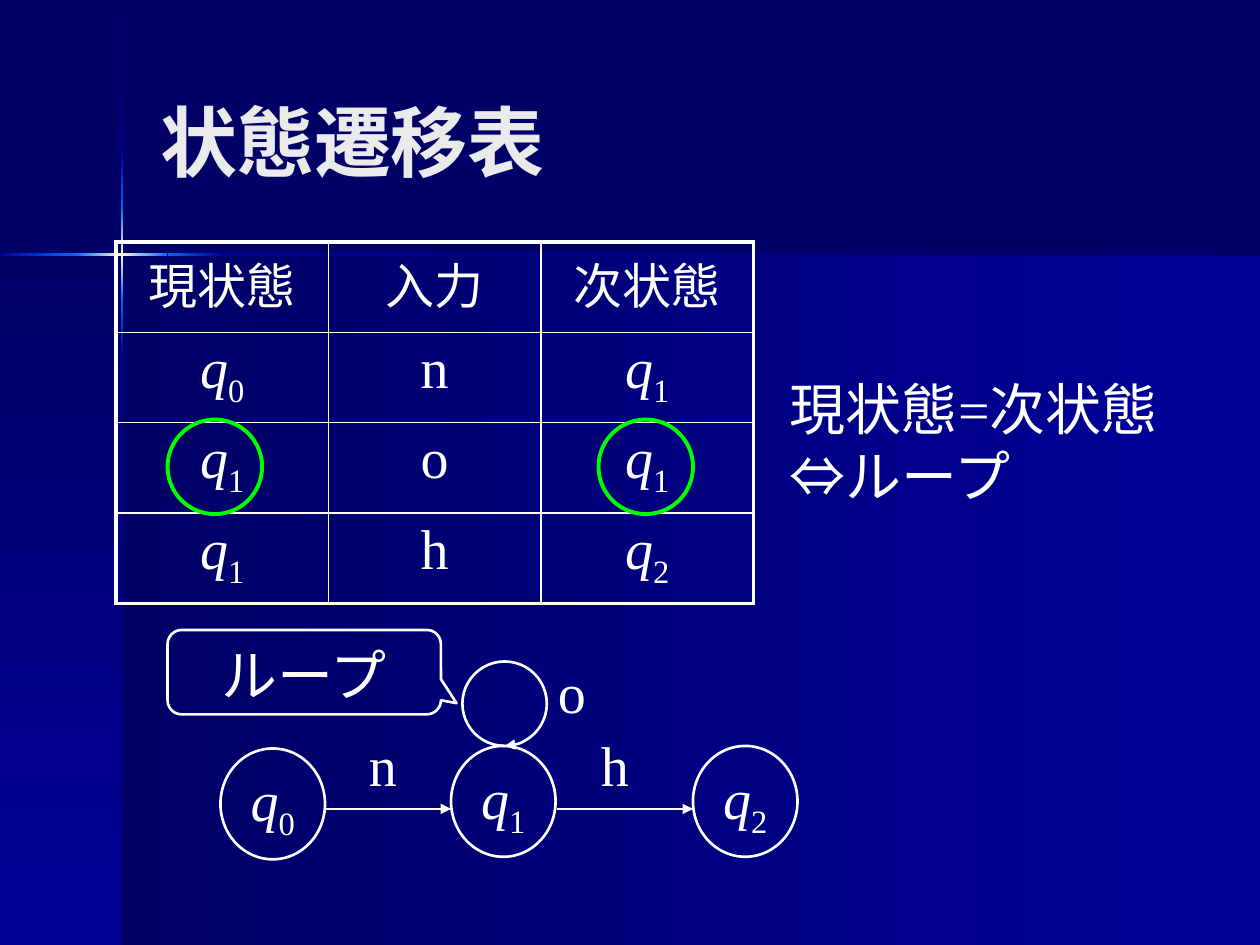
from lxml.etree import SubElement
from pptx import Presentation
from pptx.dml.color import RGBColor
from pptx.enum.shapes import MSO_CONNECTOR, MSO_SHAPE
from pptx.enum.text import MSO_ANCHOR, PP_ALIGN
from pptx.oxml.ns import qn
from pptx.util import Inches, Pt

FONT = "Times New Roman"
WHITE, GREEN = "FFFFFF", "00FF00"
NAVY, BLUE, GLOW, CREAM = "000066", "000099", "0066FF", "FFFFCC"


def color(code):
    return RGBColor.from_string(code)


def box(*sides):
    return [Inches(side) for side in sides]


def add_stops(fill, stops, angle):
    """Give a linear gradient of evenly spaced colours, angle clockwise."""
    fill.gradient()
    grad = fill._xPr.find(qn("a:gradFill"))
    for child in list(grad):
        grad.remove(child)
    holder = SubElement(grad, qn("a:gsLst"))
    for i, code in enumerate(stops):
        place = str(100000 * i // (len(stops) - 1))
        stop = SubElement(holder, qn("a:gs"), pos=place)
        SubElement(stop, qn("a:srgbClr"), val=code)
    SubElement(grad, qn("a:lin"), ang=str(angle * 60000), scaled="0")


def add_band(slide, at, stops, angle):
    band = slide.shapes.add_shape(MSO_SHAPE.RECTANGLE, *box(*at))
    band.shadow.inherit = False
    band.line.fill.background()
    add_stops(band.fill, stops, angle)


def add_backdrop(slide):
    slide.background.fill.solid()
    slide.background.fill.fore_color.rgb = color(NAVY)
    add_band(slide, (0.97, 2.02, 9.03, 5.48), [NAVY, BLUE], 0)
    add_band(slide, (0, 2.02, 0.97, 5.48), [NAVY, BLUE], 90)
    upright = [
        (0.01, 1.21, [NAVY, BLUE]),
        (1.21, 1.65, [BLUE, GLOW]),
        (1.65, 2.38, [GLOW, CREAM, GLOW]),
        (2.38, 2.82, [GLOW, BLUE]),
        (2.82, 7.5, [BLUE, NAVY]),
    ]
    for start, end, stops in upright:
        add_band(slide, (0.96, start, 0.02, end - start), stops, 90)
    level = [
        (0, 0.6, [BLUE, GLOW]),
        (0.6, 1.33, [GLOW, CREAM, GLOW]),
        (1.33, 1.77, [GLOW, BLUE]),
        (1.77, 10, [BLUE, NAVY]),
    ]
    for start, end, stops in level:
        add_band(slide, (start, 2.01, end - start, 0.02), stops, 0)


def style(run, size=32, code=WHITE, bold=False):
    run.font.name = FONT
    run.font.size = Pt(size)
    run.font.bold = bold
    run.font.color.rgb = color(code)


def write(frame, text, size=32, align=PP_ALIGN.LEFT):
    """Fill a frame; a state such as q0 gets an italic q and a subscript."""
    state = text[0] == "q"
    frame.text = text[0] if state else text
    for para in frame.paragraphs:
        para.alignment = align
        if state:
            para.runs[0].font.italic = True
            digit = para.add_run()
            digit.text = text[1:]
            digit.font._element.set("baseline", "-25000")
        for run in para.runs:
            style(run, size)


def add_title(slide, text):
    title = slide.shapes.title
    title.left, title.top, title.width, title.height = box(1.17, 0.33, 8.25, 1.57)
    title.text_frame.text = text
    title.text_frame.vertical_anchor = MSO_ANCHOR.MIDDLE
    para = title.text_frame.paragraphs[0]
    para.alignment = PP_ALIGN.LEFT
    style(para.runs[0], 44, "EAEAEA", True)
    slide.shapes._spTree.append(title._element)  # in front of the backdrop


def add_border(cell, side, width):
    edge = SubElement(cell._tc.get_or_add_tcPr(), qn("a:ln" + side), w=str(Pt(width)))
    fill = SubElement(edge, qn("a:solidFill"))
    SubElement(fill, qn("a:srgbClr"), val=WHITE)


def add_grid(slide, rows):
    high, wide = len(rows), len(rows[0])
    table = slide.shapes.add_table(high, wide, *box(0.92, 1.92, 5.06, 2.87)).table
    table.first_row = table.horz_banding = False
    for r, row in enumerate(rows):
        for c, text in enumerate(row):
            cell = table.cell(r, c)
            write(cell.text_frame, text, 28 if r == 0 else 32, PP_ALIGN.CENTER)
            outer = {"L": c == 0, "R": c == wide - 1, "T": r == 0, "B": r == high - 1}
            for side, edge in outer.items():
                add_border(cell, side, 2.25 if edge else 1)
            cell.fill.background()


def add_outline(slide, kind, at, code=WHITE, width=1.5):
    shape = slide.shapes.add_shape(kind, *box(*at))
    shape.shadow.inherit = False
    shape.fill.background()
    shape.line.color.rgb = color(code)
    shape.line.width = Pt(width)
    return shape


def add_state(slide, text, left, top):
    oval = add_outline(slide, MSO_SHAPE.OVAL, (left, top, 0.83, 0.88))
    write(oval.text_frame, text, align=PP_ALIGN.CENTER)
    oval.text_frame.word_wrap = False
    oval.text_frame.vertical_anchor = MSO_ANCHOR.MIDDLE


def add_label(slide, text, at):
    label = slide.shapes.add_textbox(*box(*at))
    label.text_frame.word_wrap = True
    write(label.text_frame, text)


def add_head(shape):
    SubElement(shape.line._get_or_add_ln(), qn("a:tailEnd"), type="triangle")


def add_arrow(slide, start, end, y):
    arrow = slide.shapes.add_connector(MSO_CONNECTOR.STRAIGHT, *box(start, y, end, y))
    arrow.line.color.rgb = color(WHITE)
    arrow.line.width = Pt(1.5)
    add_head(arrow)
    SubElement(arrow._element.spPr, qn("a:effectLst"))


def add_loop(slide):
    """Draw a circular arrow that starts and ends at its lowest point."""
    loop = add_outline(slide, MSO_SHAPE.ARC, (3.67, 5.25, 0.67, 0.67))
    loop.adjustments[0], loop.adjustments[1] = 54, 53.9
    add_head(loop)


def add_callout(slide, text):
    note = add_outline(slide, MSO_SHAPE.ROUNDED_RECTANGULAR_CALLOUT, (1.33, 5, 2.17, 0.67))
    for i, value in enumerate((0.557, 0.367, 0.167)):
        note.adjustments[i] = value
    write(note.text_frame, text, align=PP_ALIGN.CENTER)
    note.text_frame.vertical_anchor = MSO_ANCHOR.TOP


def main():
    deck = Presentation()
    deck.slide_width, deck.slide_height = box(10, 7.5)
    slide = deck.slides.add_slide(deck.slide_layouts[5])
    add_backdrop(slide)
    add_title(slide, "状態遷移表")
    add_grid(slide, [
        ("現状態", "入力", "次状態"),
        ("q0", "n", "q1"),
        ("q1", "o", "q1"),
        ("q1", "h", "q2"),
    ])
    for left in (1.33, 4.75):
        add_outline(slide, MSO_SHAPE.OVAL, (left, 3.33, 0.75, 0.75), GREEN, 2.25)
    add_label(slide, "現状態=次状態\n⇔ループ", (6.17, 2.92, 3.12, 1.17))
    for text, left, top in (("q0", 1.75, 5.94), ("q1", 3.58, 5.92), ("q2", 5.5, 5.92)):
        add_state(slide, text, left, top)
    add_arrow(slide, 2.58, 3.58, 6.42)
    add_arrow(slide, 4.42, 5.5, 6.42)
    add_loop(slide)
    for text, left, top in (("n", 2.83, 5.75), ("o", 4.33, 5.17), ("h", 4.67, 5.75)):
        add_label(slide, text, (left, top, 0.55, 0.63))
    add_callout(slide, "ループ")
    deck.save("out.pptx")


if __name__ == "__main__":
    main()
